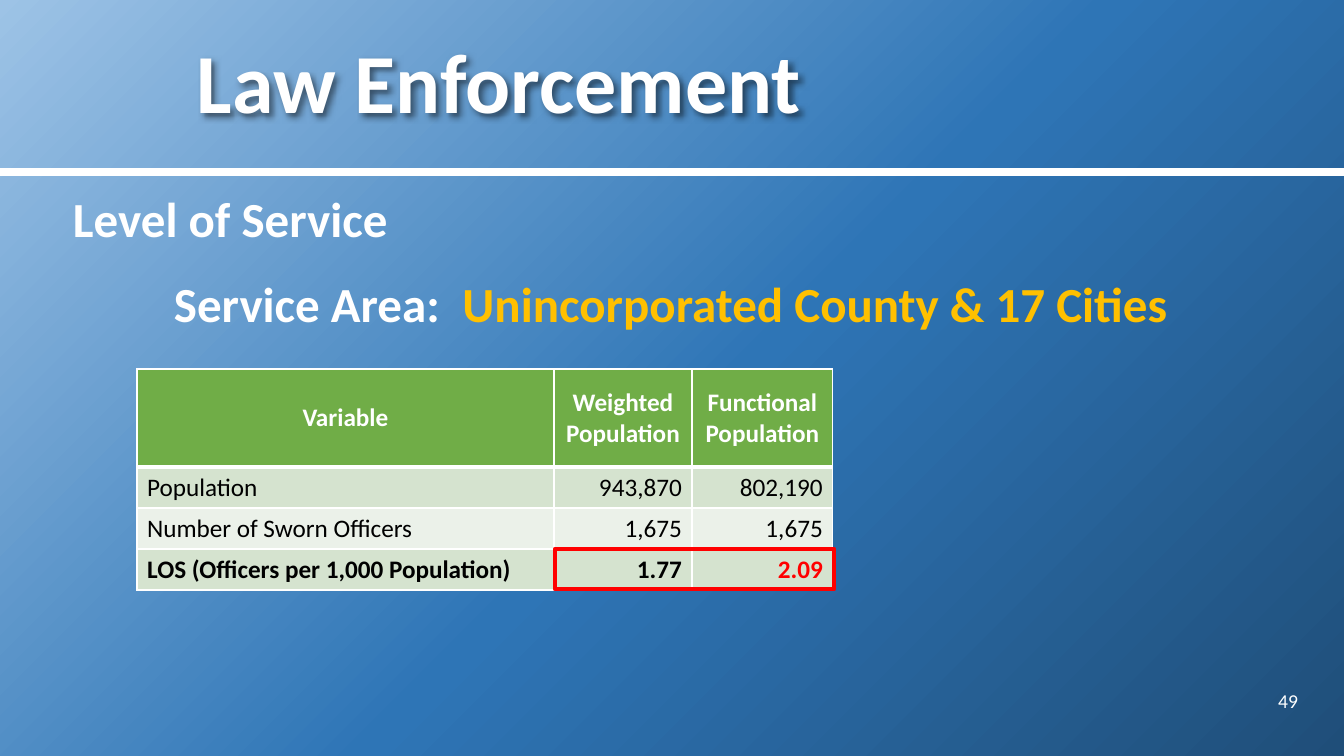
from lxml.etree import SubElement
from pptx import Presentation
from pptx.dml.color import RGBColor
from pptx.enum.shapes import MSO_CONNECTOR, MSO_SHAPE
from pptx.enum.text import MSO_ANCHOR, PP_ALIGN
from pptx.oxml import parse_xml
from pptx.oxml.ns import nsdecls, qn
from pptx.util import Pt

COLORS = {
    "white": "FFFFFF", "black": "000000", "red": "FF0000", "gold": "FFC000",
    "header": "70AD47", "band": "D5E3CF", "pale": "EBF1E9",
    "sky": "9DC3E6", "blue": "2E75B6", "navy": "1F4E79",
}
EMU_PER_PX = 914400 / 100.8


def px(length):
    return round(length * EMU_PER_PX)


def rgb(color):
    return RGBColor.from_string(COLORS[color])


class SlideBuilder:
    font_name = "Calibri"

    def __init__(self, slide):
        self.slide = slide

    def background(self, stops):
        fill = self.slide.background.fill
        fill.gradient()
        stop_xml = "".join(
            f'<a:gs pos="{position * 1000}"><a:srgbClr val="{COLORS[color]}"/></a:gs>'
            for position, color in stops)
        gradient = self.slide.element.find(".//" + qn("a:gradFill"))
        gradient.getparent().replace(gradient, parse_xml(
            f'<a:gradFill {nsdecls("a")}><a:gsLst>{stop_xml}</a:gsLst>'
            '<a:path path="circle"><a:fillToRect r="100000" b="100000"/></a:path></a:gradFill>'))

    def style(self, paragraph, size, color, bold=False, align=PP_ALIGN.LEFT):
        paragraph.alignment = align
        font = paragraph.font
        font.name, font.size, font.bold = self.font_name, Pt(size), bold
        font.color.rgb = rgb(color)

    def text(self, box, paragraphs, size, bold=False, align=PP_ALIGN.LEFT,
             anchor=MSO_ANCHOR.TOP, line_spacing=1.0, space_before=0):
        shape = self.slide.shapes.add_textbox(*map(px, box))
        frame = shape.text_frame
        frame.word_wrap = True
        frame.vertical_anchor = anchor
        for index, (indent, runs) in enumerate(paragraphs):
            paragraph = frame.add_paragraph() if index else frame.paragraphs[0]
            if indent:
                paragraph._p.get_or_add_pPr().set("marL", str(px(indent)))
            paragraph.line_spacing = line_spacing
            if index:
                paragraph.space_before = Pt(space_before)
            self.style(paragraph, size, "white", bold, align)
            for words, color in runs:
                run = paragraph.add_run()
                run.text = words
                if color != "white":
                    run.font.color.rgb = rgb(color)
        return shape

    def shadow(self, shape):
        shape._element.spPr.append(parse_xml(
            f'<a:effectLst {nsdecls("a")}><a:outerShdw blurRad="50800" dist="38100" dir="2700000">'
            '<a:srgbClr val="000000"><a:alpha val="50000"/></a:srgbClr></a:outerShdw></a:effectLst>'))

    def line(self, start, end, color, width):
        connector = self.slide.shapes.add_connector(
            MSO_CONNECTOR.STRAIGHT, *map(px, start + end))
        connector.line.color.rgb = rgb(color)
        connector.line.width = Pt(width)
        SubElement(connector._element.spPr, qn("a:effectLst"))

    def outline(self, box, color, width):
        shape = self.slide.shapes.add_shape(MSO_SHAPE.RECTANGLE, *map(px, box))
        shape.shadow.inherit = False
        shape.fill.background()
        shape.line.color.rgb = rgb(color)
        shape.line.width = Pt(width)

    def borders(self, cell, top, bottom):
        properties = cell._tc.get_or_add_tcPr()
        for side, width in (("L", 1), ("R", 1), ("T", top), ("B", bottom)):
            properties.append(parse_xml(
                f'<a:ln{side} {nsdecls("a")} w="{Pt(width)}"><a:solidFill>'
                f'<a:srgbClr val="{COLORS["white"]}"/></a:solidFill></a:ln{side}>'))

    def table(self, left, top, widths, heights, rows, size):
        frame = self.slide.shapes.add_table(
            len(rows), len(widths), *map(px, (left, top, sum(widths), sum(heights))))
        table = frame.table
        for column, width in zip(table.columns, widths):
            column.width = px(width)
        for row, height in zip(table.rows, heights):
            row.height = px(height)
        for row_index, row in enumerate(rows):
            is_header = row_index == 0
            is_total = row_index == len(rows) - 1
            fill = "header" if is_header else "band" if row_index % 2 else "pale"
            for column_index, words in enumerate(row):
                cell = table.cell(row_index, column_index)
                self.borders(cell, 3 if row_index == 1 else 1, 3 if is_header else 1)
                cell.fill.solid()
                cell.fill.fore_color.rgb = rgb(fill)
                cell.vertical_anchor = MSO_ANCHOR.MIDDLE if is_header else MSO_ANCHOR.TOP
                cell.text = words
                is_result = is_total and column_index == len(row) - 1
                color = "white" if is_header else "red" if is_result else "black"
                align = (PP_ALIGN.CENTER if is_header
                         else PP_ALIGN.RIGHT if column_index else PP_ALIGN.LEFT)
                self.style(cell.text_frame.paragraphs[0], size, color,
                           is_header or is_total, align)


def main():
    presentation = Presentation()
    presentation.slide_width, presentation.slide_height = px(1344), px(756)
    builder = SlideBuilder(presentation.slides.add_slide(presentation.slide_layouts[6]))
    builder.background([(0, "sky"), (53, "blue"), (100, "navy")])
    builder.line((0, 172), (1344, 172), "white", 6)
    builder.text((1218, 681, 90, 40), [(0, [("49", "white")])], 14,
                 align=PP_ALIGN.RIGHT, anchor=MSO_ANCHOR.MIDDLE)

    left, top = 137, 369
    widths, heights = [417, 138, 141], [98, 41, 41, 41]
    builder.table(left, top, widths, heights, [
        ["Variable", "Weighted Population", "Functional Population"],
        ["Population", "943,870", "802,190"],
        ["Number of Sworn Officers", "1,675", "1,675"],
        ["LOS (Officers per 1,000 Population)", "1.77", "2.09"],
    ], 18)

    builder.text((63, 172, 1154, 197), [
        (0, [("Level of Service", "white")]),
        (101, [("Service Area:  ", "white"), ("Unincorporated County & 17 Cities", "gold")]),
    ], 35, bold=True, line_spacing=1.2, space_before=10)
    builder.outline((left + widths[0] + 1, top + sum(heights[:-1]), sum(widths[1:]), 40),
                    "red", 3.25)
    title = builder.text((187, 0, 1119, 172), [(0, [("Law Enforcement", "white")])], 60,
                         bold=True, anchor=MSO_ANCHOR.MIDDLE, line_spacing=0.9)
    builder.shadow(title)
    presentation.save("out.pptx")


if __name__ == "__main__":
    main()
